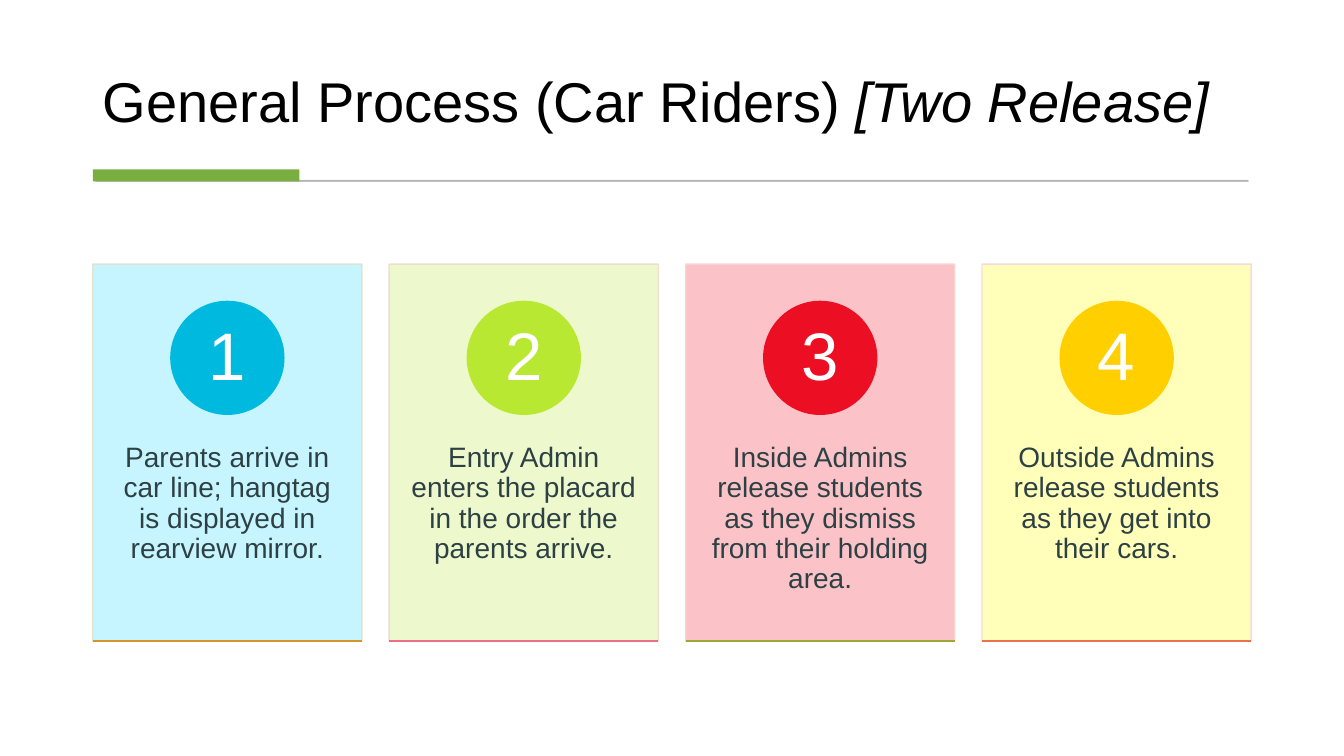
import pptx
import pptx.util
import pptx.dml.color
import pptx.enum.shapes
import pptx.enum.text
import pptx.oxml.ns
import lxml.etree

Inches, Pt = pptx.util.Inches, pptx.util.Pt
SHAPES = pptx.enum.shapes.MSO_SHAPE
ANCHOR = pptx.enum.text.MSO_ANCHOR
ALIGN = pptx.enum.text.PP_ALIGN


def paint(color_format, color, opacity=100):
    """Solid fill from a hex string, with opacity in percent."""
    color_format.solid()
    color_format.fore_color.rgb = pptx.dml.color.RGBColor.from_string(color)
    if opacity < 100:
        tag = pptx.oxml.ns.qn("a:srgbClr")
        for element in color_format._xPr.findall(".//" + tag):
            alpha = lxml.etree.SubElement(element, pptx.oxml.ns.qn("a:alpha"))
            alpha.set("val", str(opacity * 1000))


def write(shape, runs, align, anchor, insets, font_format, color):
    """Fill a shape's single paragraph with (text, italic) runs."""
    frame = shape.text_frame
    frame.word_wrap = True
    frame.auto_size = pptx.enum.text.MSO_AUTO_SIZE.NONE
    frame.vertical_anchor = anchor
    frame.margin_left = frame.margin_right = Inches(insets[0])
    frame.margin_top = frame.margin_bottom = Inches(insets[1])
    paragraph = frame.paragraphs[0]
    paragraph.alignment = align
    paragraph.line_spacing = 0.9
    for text, italic in runs:
        run = paragraph.add_run()
        run.text = text
        for name, value in {**font_format, "italic": italic}.items():
            setattr(run.font, name, value)
        paint(run.font.fill, color)


presentation = pptx.Presentation()
presentation.slide_width = Inches(13.33)
presentation.slide_height = Inches(7.5)
slide = presentation.slides.add_slide(presentation.slide_layouts[5])
shapes = slide.shapes

# Card grid
LEFT, TOP = 0.92, 2.62
CARD_WIDTH, CARD_HEIGHT, COLUMN_STEP = 2.67, 3.74, 2.94
CIRCLE, NUMBER_BOX = 1.12, 0.79

# Title
title = shapes.title
title_place = {"left": LEFT, "top": 0.28, "width": 11.49, "height": 1.11}
for name, value in title_place.items():
    setattr(title, name, Inches(value))
write(title, [("General Process (Car Riders) ", False), ("[Two Release]", True)],
      ALIGN.LEFT, ANCHOR.BOTTOM, (0.1, 0.05),
      {"name": "Arial", "size": Pt(40)}, "000000")

# Thin rule and green accent under the title
rule = shapes.add_shape(SHAPES.RECTANGLE, Inches(0.95), Inches(1.79),
                        Inches(11.43), Inches(0.01))
accent = shapes.add_shape(SHAPES.RECTANGLE, Inches(LEFT), Inches(1.68),
                          Inches(2.05), Inches(0.12))
rule.shadow.inherit = accent.shadow.inherit = False
paint(rule.fill, "595959", 30)
paint(rule.line.fill, "595959", 30)
rule.line.width = Pt(0.75)
paint(accent.fill, "7BAE41")
accent.line.fill.background()

# Steps: text, card fill, card border, circle, bottom line
steps = [
    ("Parents arrive in car line; hangtag is displayed in rearview mirror.",
     "C1F5FF", "E0E1CE", "00B9DE", "D4952A"),
    ("Entry Admin enters the placard in the order the parents arrive.",
     "ECF9C7", "EFDDCD", "B9E832", "EE6E88"),
    ("Inside Admins release students as they dismiss from their holding area.",
     "FBBDC3", "F7D5D0", "EC0F24", "A1A737"),
    ("Outside Admins release students as they get into their cars.",
     "FFFFB3", "F8D5DA", "FFCF00", "EB704E"),
]

for index, (text, card_color, border, circle_color, base_color) in enumerate(steps):
    left = LEFT + index * COLUMN_STEP
    center = left + CARD_WIDTH / 2
    bottom = TOP + CARD_HEIGHT

    # Card and numbered circle
    card = shapes.add_shape(SHAPES.RECTANGLE, Inches(left), Inches(TOP),
                            Inches(CARD_WIDTH), Inches(CARD_HEIGHT))
    circle = shapes.add_shape(SHAPES.OVAL, Inches(center - CIRCLE / 2), Inches(2.99),
                              Inches(CIRCLE), Inches(CIRCLE))
    for shape, fill, line, opacity in ((card, card_color, border, 90),
                                       (circle, circle_color, circle_color, 100)):
        shape.shadow.inherit = False
        paint(shape.fill, fill, opacity)
        paint(shape.line.fill, line, opacity)
        shape.line.width = Pt(1)

    number = shapes.add_textbox(Inches(center - NUMBER_BOX / 2), Inches(3.16),
                                Inches(NUMBER_BOX), Inches(NUMBER_BOX))
    write(number, [(str(index + 1), False)], ALIGN.CENTER, ANCHOR.MIDDLE,
          (0.09, 0.01), {"name": "Arial", "size": Pt(48)}, "FFFFFF")

    # Description
    description = shapes.add_textbox(Inches(left), Inches(4.04),
                                     Inches(CARD_WIDTH), Inches(2.25))
    write(description, [(text, False)], ALIGN.CENTER, ANCHOR.TOP,
          (0.21, 0.36), {"name": "Arial", "size": Pt(20)}, "2D4044")

    # Coloured line along the bottom edge
    base = shapes.add_connector(pptx.enum.shapes.MSO_CONNECTOR.STRAIGHT,
                                Inches(left), Inches(bottom),
                                Inches(left + CARD_WIDTH), Inches(bottom))
    paint(base.line.fill, base_color)
    base.line.width = Pt(1)
    lxml.etree.SubElement(base._element.spPr, pptx.oxml.ns.qn("a:effectLst"))

presentation.save("out.pptx")
